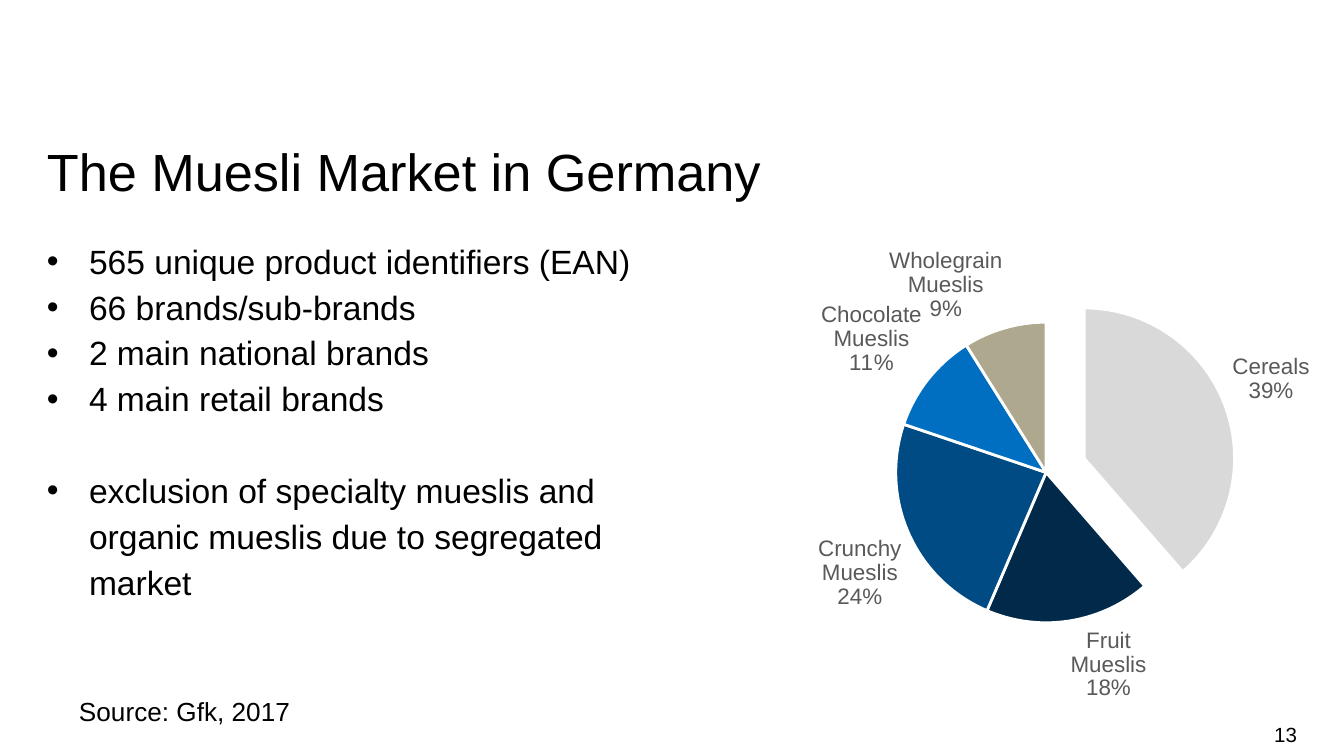
from lxml.etree import SubElement
from pptx import Presentation
from pptx.chart.data import CategoryChartData
from pptx.dml.color import RGBColor
from pptx.enum.chart import XL_CHART_TYPE, XL_LABEL_POSITION
from pptx.enum.text import MSO_ANCHOR, PP_ALIGN
from pptx.oxml import parse_xml
from pptx.oxml.ns import nsdecls, qn
from pptx.util import Emu, Pt

TITLE = "The Muesli Market in Germany"
FACTS = [
    "565 unique product identifiers (EAN)",
    "66 brands/sub-brands",
    "2 main national brands",
    "4 main retail brands",
    "exclusion of specialty mueslis and organic mueslis due to segregated market",
]
SOURCE = "Source: Gfk, 2017"
PAGE_NUMBER = "13"

BLACK = RGBColor(0x00, 0x00, 0x00)
WHITE = RGBColor(0xFF, 0xFF, 0xFF)
LABEL_GREY = RGBColor(0x59, 0x59, 0x59)
SEGMENTS = [
    ("Cereals", 39, RGBColor(0xD9, 0xD9, 0xD9)),
    ("Fruit Mueslis", 18, RGBColor(0x00, 0x29, 0x4A)),
    ("Crunchy Mueslis", 24, RGBColor(0x00, 0x4B, 0x83)),
    ("Chocolate Mueslis", 11, RGBColor(0x00, 0x6F, 0xC2)),
    ("Wholegrain Mueslis", 9, RGBColor(0xAE, 0xA8, 0x8E)),
]
PIE_AREA = {"x": 0.27, "y": 0.16, "w": 0.49, "h": 0.66}
EXPLOSION = 27

FONT = "Arial"
PX = 914400 / 134.4
LEFT = 47
INDENT = 42
LINE = 1.14


def px(length):
    """Turn px into EMU."""
    return Emu(round(length * PX))


def set_font(font, size, color=BLACK):
    """Set the deck font with a size and colour."""
    font.name = FONT
    font.size = Pt(size)
    font.color.rgb = color


def add_text(page, area, lines, size, spacing=LINE, wrap=True):
    """Add a text box without insets, one paragraph per line."""
    box = page.shapes.add_textbox(*map(px, area))
    frame = box.text_frame
    frame.word_wrap = wrap
    frame.margin_left = frame.margin_right = 0
    frame.margin_top = frame.margin_bottom = 0
    for index, line in enumerate(lines):
        para = frame.add_paragraph() if index else frame.paragraphs[0]
        para.line_spacing = spacing
        span = para.add_run()
        span.text = line
        set_font(span.font, size)
    return frame


def add_bullet(para):
    """Give a paragraph a hanging round bullet."""
    properties = para._p.get_or_add_pPr()
    properties.set("marL", str(px(INDENT)))
    properties.set("indent", str(-px(INDENT)))
    SubElement(properties, qn("a:buFont"), typeface=FONT)
    SubElement(properties, qn("a:buChar"), char="•")


def add_pie(page, area):
    """Add the market share pie with its first segment pulled out."""
    data = CategoryChartData()
    data.categories = [name for name, share, color in SEGMENTS]
    data.add_series("Series 1", [share for name, share, color in SEGMENTS])
    chart = page.shapes.add_chart(XL_CHART_TYPE.PIE, *map(px, area), data).chart
    chart.has_legend = chart.has_title = False
    set_font(chart.font, 10)
    plot = chart.plots[0]
    plot.vary_by_categories = True
    series = plot.series[0]
    for index, (name, share, color) in enumerate(SEGMENTS):
        look = series.points[index].format
        look.fill.solid()
        look.fill.fore_color.rgb = color
        look.line.color.rgb = WHITE
        look.line.width = Pt(1.5)
    first = series._element.find(qn("c:dPt"))
    first.find(qn("c:spPr")).addprevious(
        parse_xml(f'<c:explosion {nsdecls("c")} val="{EXPLOSION}"/>'))

    labels = series.data_labels
    labels.show_category_name = labels.show_percentage = True
    labels.show_value = False
    labels.position = XL_LABEL_POSITION.OUTSIDE_END
    set_font(labels.font, 12, LABEL_GREY)
    labels._element.find(qn("c:showBubbleSize")).addnext(
        parse_xml(f'<c:separator {nsdecls("c")}>\n</c:separator>'))

    plot_area = chart._chartSpace.chart.plotArea
    for old in plot_area.findall(qn("c:layout")):
        plot_area.remove(old)
    layout = parse_xml(f'<c:layout {nsdecls("c")}><c:manualLayout/></c:layout>')
    SubElement(layout[0], qn("c:layoutTarget"), val="inner")
    for side in "xy":
        SubElement(layout[0], qn(f"c:{side}Mode"), val="edge")
    for side, share in PIE_AREA.items():
        SubElement(layout[0], qn(f"c:{side}"), val=str(share))
    plot_area.insert(0, layout)


def main():
    """Build the slide."""
    deck = Presentation()
    deck.slide_width, deck.slide_height = px(1344), px(756)
    page = deck.slides.add_slide(deck.slide_layouts[6])

    number = add_text(page, (996, 714, 301, 40), [PAGE_NUMBER], 11, 1.0)
    number.vertical_anchor = MSO_ANCHOR.MIDDLE
    number.paragraphs[0].alignment = PP_ALIGN.RIGHT

    facts = add_text(page, (LEFT, 235, 595, 456), FACTS, 18)
    for para in facts.paragraphs:
        add_bullet(para)
    facts.paragraphs[-1].space_before = Pt(24.6)

    add_text(page, (LEFT, 142, 1251, 60), [TITLE], 28, Pt(32))
    add_pie(page, (730, 249, 614, 456))
    add_text(page, (79, 691, 212, 36), [SOURCE], 14, wrap=False)
    deck.save("out.pptx")


if __name__ == "__main__":
    main()
